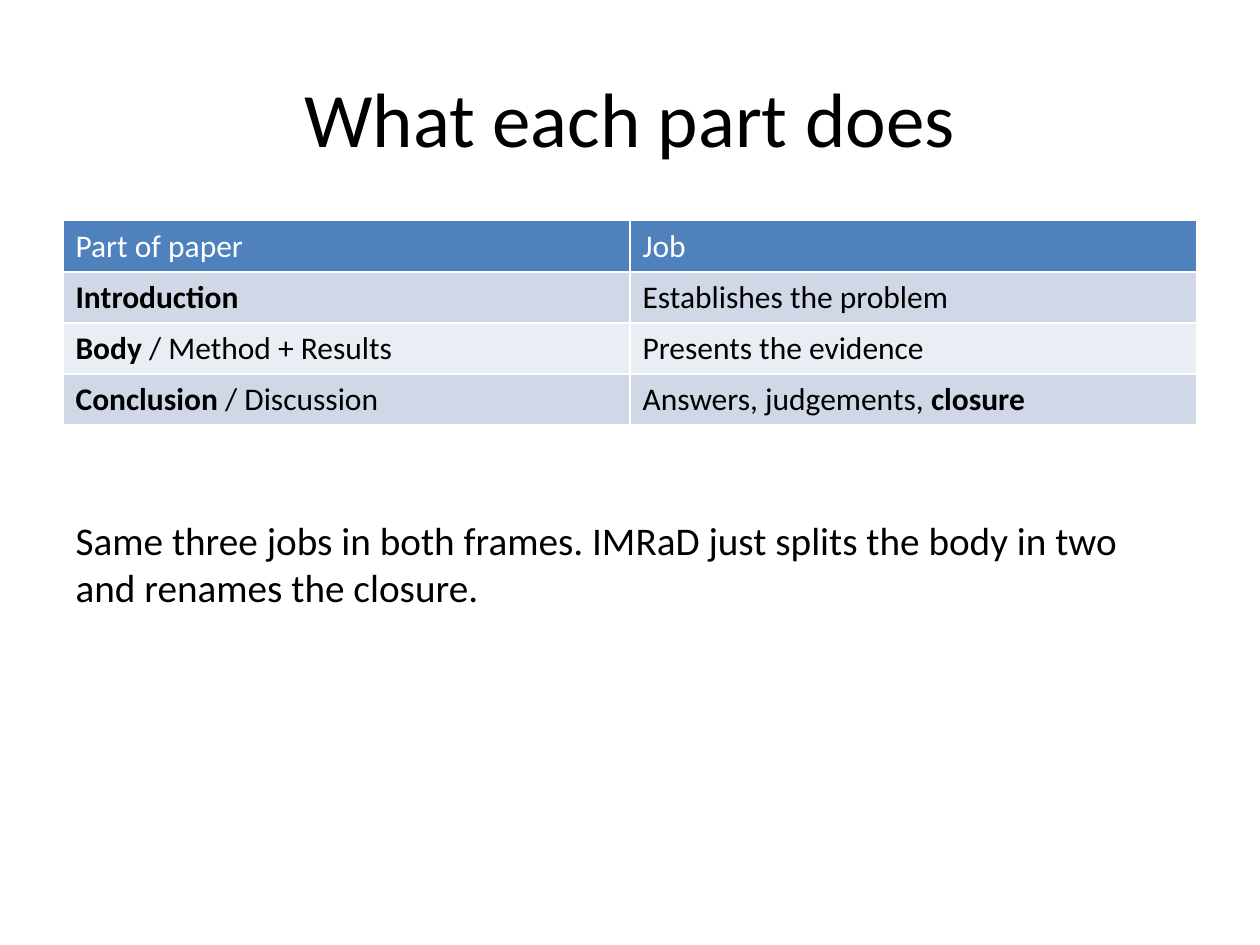
from pptx import Presentation
from pptx.dml.color import RGBColor
from pptx.enum.text import MSO_ANCHOR as Anchor, MSO_AUTO_SIZE as AutoSize, PP_ALIGN as Align
from pptx.oxml.xmlchemy import OxmlElement
from pptx.util import Cm, Pt

BLACK = RGBColor(0x00, 0x00, 0x00)
WHITE = RGBColor(0xFF, 0xFF, 0xFF)
HEADER_BLUE = RGBColor(0x4F, 0x81, 0xBD)
BANDS = (RGBColor(0xD0, 0xD8, 0xE8), RGBColor(0xE9, 0xED, 0xF4))

LEFT, WIDTH = 1.27, 22.86
ROW_HEIGHT = 1.02

ROWS = [
    ("Part of paper", "Job"),
    ("**Introduction**", "Establishes the problem"),
    ("**Body** / Method + Results", "Presents the evidence"),
    ("**Conclusion** / Discussion", "Answers, judgements, **closure**"),
]


def write(para, text, *, size, color=BLACK, font="Calibri", align=Align.LEFT):
    """Fill a paragraph; words between double asterisks become bold."""
    para.alignment = align
    for index, part in enumerate(text.split("**")):
        if part:
            span = para.add_run()
            span.text = part
            span.font.name = font
            span.font.size = Pt(size)
            span.font.bold = index % 2 == 1
            span.font.color.rgb = color


def remove_bullet(para):
    properties = para._p.get_or_add_pPr()
    properties.set("marL", "0")
    properties.set("indent", "0")
    properties.append(OxmlElement("a:buNone"))


class SlideBuilder:
    def __init__(self, deck):
        self.page = deck.slides.add_slide(deck.slide_layouts[1])

    def place(self, box, top, height, anchor):
        box.left, box.top = Cm(LEFT), Cm(top)
        box.width, box.height = Cm(WIDTH), Cm(height)
        frame = box.text_frame
        frame.word_wrap = True
        frame.auto_size = AutoSize.NONE
        frame.vertical_anchor = anchor
        return frame.paragraphs[0]

    def title(self, text, top, height):
        para = self.place(self.page.shapes.title, top, height, Anchor.MIDDLE)
        write(para, text, size=44, align=Align.CENTER)

    def body(self, text, top, height):
        para = self.place(self.page.placeholders[1], top, height, Anchor.TOP)
        remove_bullet(para)
        para.space_before = Pt(0)
        write(para, text, size=22.4)

    def table(self, rows, top):
        """Add a table whose white rules come from the default table style."""
        table = self.page.shapes.add_table(
            len(rows), len(rows[0]), Cm(LEFT), Cm(top),
            Cm(WIDTH), Cm(ROW_HEIGHT * len(rows))).table
        for row_index, row in enumerate(rows):
            is_header = row_index == 0
            fill = HEADER_BLUE if is_header else BANDS[(row_index - 1) % 2]
            for column_index, text in enumerate(row):
                cell = table.cell(row_index, column_index)
                cell.fill.solid()
                cell.fill.fore_color.rgb = fill
                write(cell.text_frame.paragraphs[0], text, size=18,
                      color=WHITE if is_header else BLACK)


def main():
    deck = Presentation()
    deck.slide_width, deck.slide_height = Cm(25.4), Cm(19.05)
    slide = SlideBuilder(deck)
    slide.title("What each part does", top=0.76, height=3.18)
    slide.table(ROWS, top=4.45)
    slide.body("Same three jobs in both frames. IMRaD just splits the body in two "
               "and renames the closure.", top=10.29, height=1.83)
    deck.save("out.pptx")


if __name__ == "__main__":
    main()
